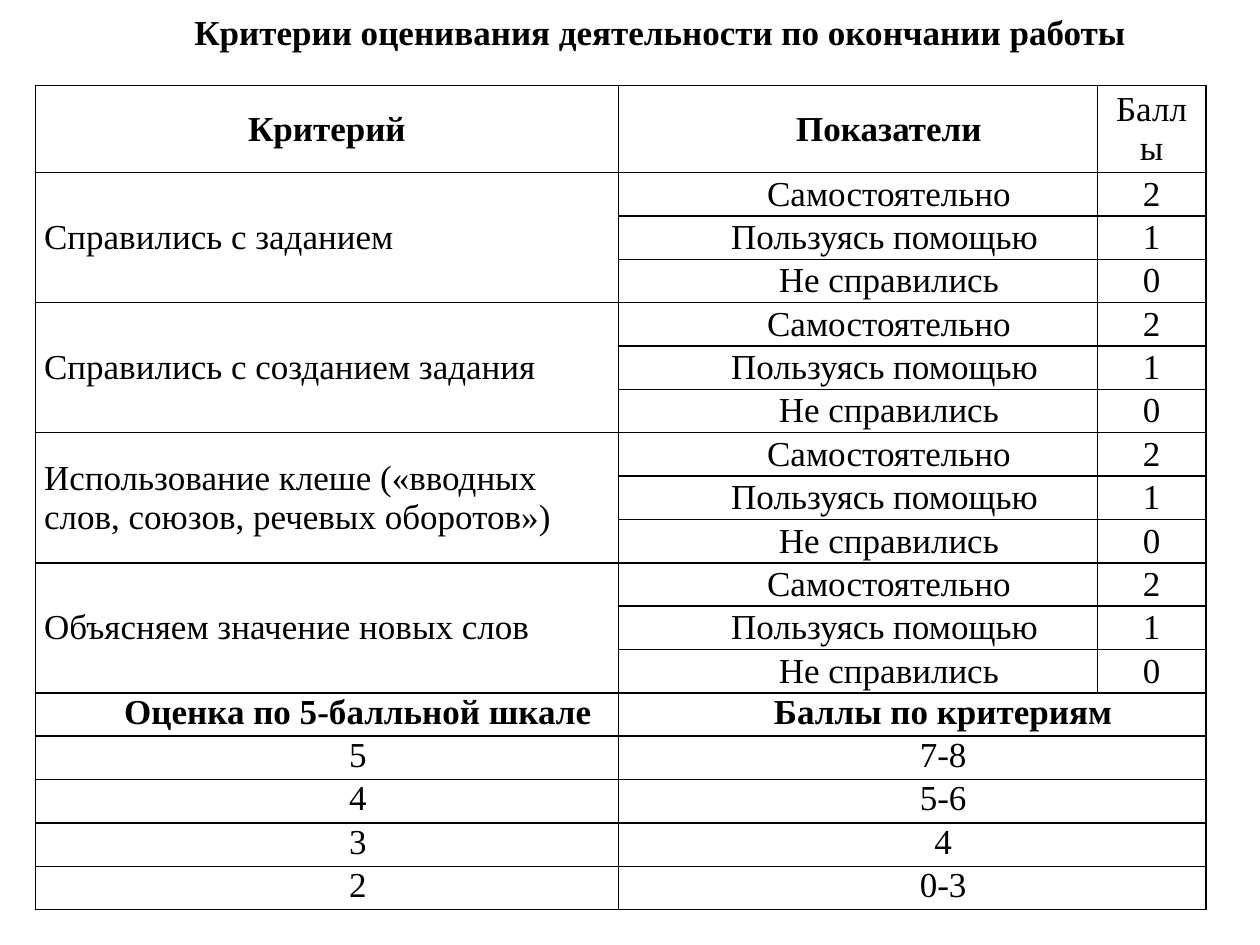
from dataclasses import dataclass

from lxml.etree import SubElement
from pptx import Presentation
from pptx.dml.color import RGBColor
from pptx.enum.text import MSO_ANCHOR as Anchor, PP_ALIGN as Align
from pptx.oxml.ns import qn
from pptx.util import Inches, Pt


@dataclass(frozen=True)
class Theme:
    font: str = "Times New Roman"
    size: int = 20
    ink: str = "000000"
    border: int = 1
    side_margin: float = 0.07
    first_line: float = 0.49


THEME = Theme()
TITLE = "Критерии оценивания деятельности по окончании работы"
HEADINGS = ["Критерий", "Показатели", "Баллы"]
CRITERIA = [
    "Справились с заданием",
    "Справились с созданием задания",
    "Использование клеше («вводных слов, союзов, речевых оборотов»)",
    "Объясняем значение новых слов",
]
LEVELS = [("Самостоятельно", "2"), ("Пользуясь помощью ", "1"), ("Не справились", "0")]
SCALE_HEADINGS = ("Оценка по 5-балльной шкале", "Баллы по критериям")
SCALE = [("5", "7-8"), ("4", "5-6"), ("3", "4"), ("2", "0-3")]

COLUMN_WIDTHS = [4.63, 3.8, 0.86]
TABLE_LEFT, TABLE_TOP, TABLE_HEIGHT = 0.28, 0.68, 6.54
HEADER_HEIGHT = 0.69
ROW_COUNT = 1 + len(CRITERIA) * len(LEVELS) + 1 + len(SCALE)


def write(frame, text, bold=False, align=Align.CENTER, indented=False):
    paragraph = frame.paragraphs[0]
    paragraph.text = text
    paragraph.alignment = align
    if indented:
        paragraph._p.get_or_add_pPr().set("indent", str(Inches(THEME.first_line)))
    font = paragraph.font
    font.name, font.size, font.bold = THEME.font, Pt(THEME.size), bold
    font.color.rgb = RGBColor.from_string(THEME.ink)


def draw_borders(cell):
    properties = cell._tc.get_or_add_tcPr()
    for side in ("lnL", "lnR", "lnT", "lnB"):
        line = SubElement(properties, qn(f"a:{side}"), w=str(Pt(THEME.border)))
        fill = SubElement(line, qn("a:solidFill"))
        SubElement(fill, qn("a:srgbClr"), val=THEME.ink)


def style_cell(cell):
    draw_borders(cell)
    cell.fill.background()
    cell.margin_left = cell.margin_right = Inches(THEME.side_margin)
    cell.margin_top = cell.margin_bottom = 0


def add_title(slide):
    box = slide.shapes.add_textbox(Inches(0.92), Inches(0.03), Inches(8.15), Inches(0.44))
    frame = box.text_frame
    frame.word_wrap = False
    frame.vertical_anchor = Anchor.MIDDLE
    write(frame, TITLE, bold=True, indented=True)


def add_grid(slide):
    table = slide.shapes.add_table(
        ROW_COUNT, len(COLUMN_WIDTHS), Inches(TABLE_LEFT), Inches(TABLE_TOP),
        Inches(sum(COLUMN_WIDTHS)), Inches(TABLE_HEIGHT)).table
    table.first_row = table.horz_banding = False
    for column, width in zip(table.columns, COLUMN_WIDTHS):
        column.width = Inches(width)
    row_height = (TABLE_HEIGHT - HEADER_HEIGHT) / (ROW_COUNT - 1)
    for index, row in enumerate(table.rows):
        row.height = Inches(row_height if index else HEADER_HEIGHT)
    for cell in table.iter_cells():
        style_cell(cell)
    return table


def fill_cell(table, row, column, text, anchor=Anchor.MIDDLE, **style):
    cell = table.cell(row, column)
    cell.vertical_anchor = anchor
    write(cell.text_frame, text, **style)


def fill_criteria(table):
    for column, heading in enumerate(HEADINGS):
        fill_cell(table, 0, column, heading, bold=column < 2, indented=column == 1)
    for index, criterion in enumerate(CRITERIA):
        top = 1 + index * len(LEVELS)
        table.cell(top, 0).merge(table.cell(top + len(LEVELS) - 1, 0))
        fill_cell(table, top, 0, criterion, align=Align.LEFT if index else Align.JUSTIFY)
        for row, (level, points) in enumerate(LEVELS, top):
            fill_cell(table, row, 1, level, indented=True)
            fill_cell(table, row, 2, points)


def fill_scale(table):
    """Fill the conversion of points to marks at the foot of the table."""
    top = ROW_COUNT - len(SCALE) - 1
    for row, pair in enumerate([SCALE_HEADINGS, *SCALE], top):
        table.cell(row, 1).merge(table.cell(row, 2))
        for column, text in enumerate(pair):
            fill_cell(table, row, column, text, Anchor.TOP, bold=row == top, indented=True)


def main():
    presentation = Presentation()
    presentation.slide_width, presentation.slide_height = Inches(10), Inches(7.5)
    slide = presentation.slides.add_slide(presentation.slide_layouts[6])
    table = add_grid(slide)
    fill_criteria(table)
    fill_scale(table)
    add_title(slide)
    presentation.save("out.pptx")


if __name__ == "__main__":
    main()
